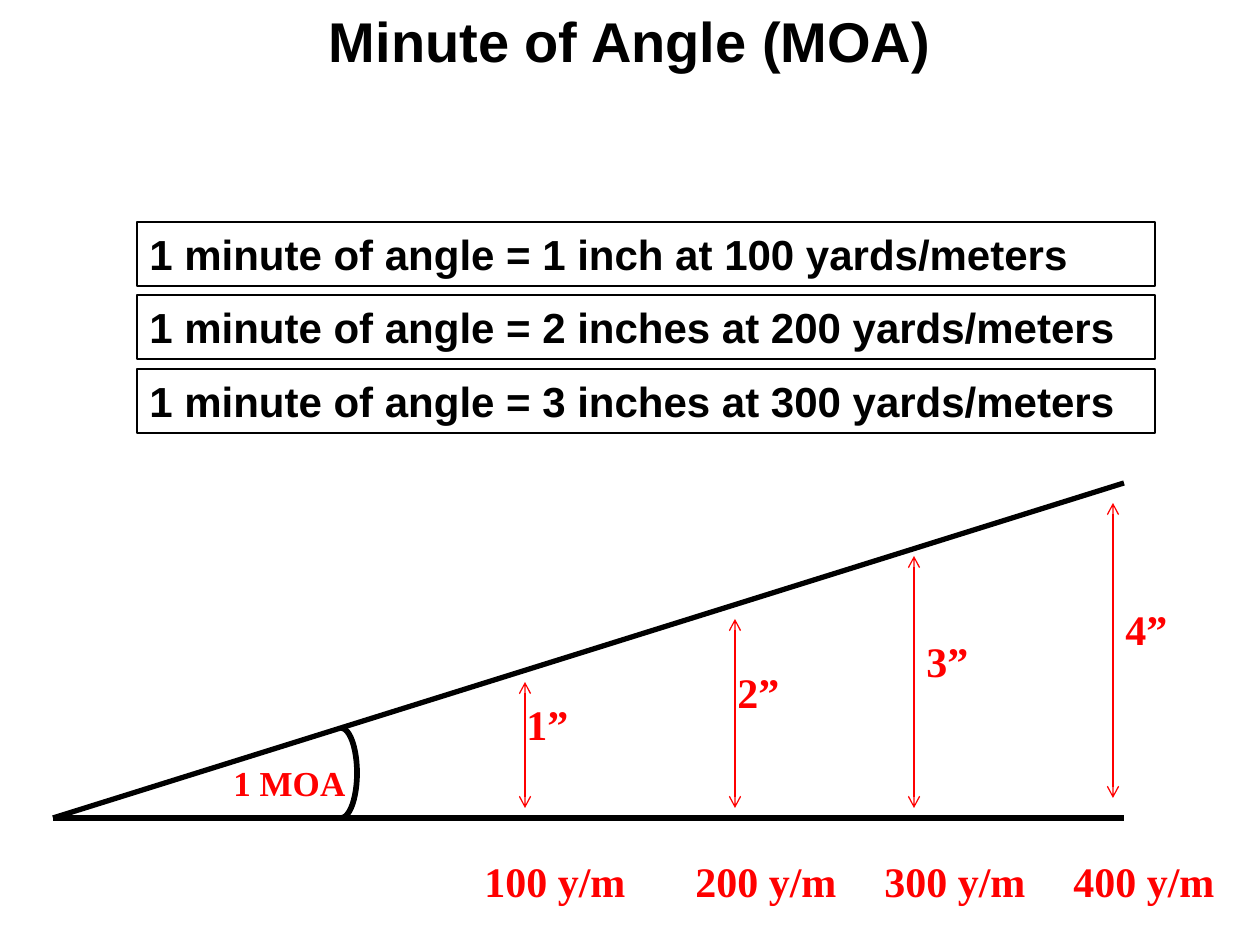
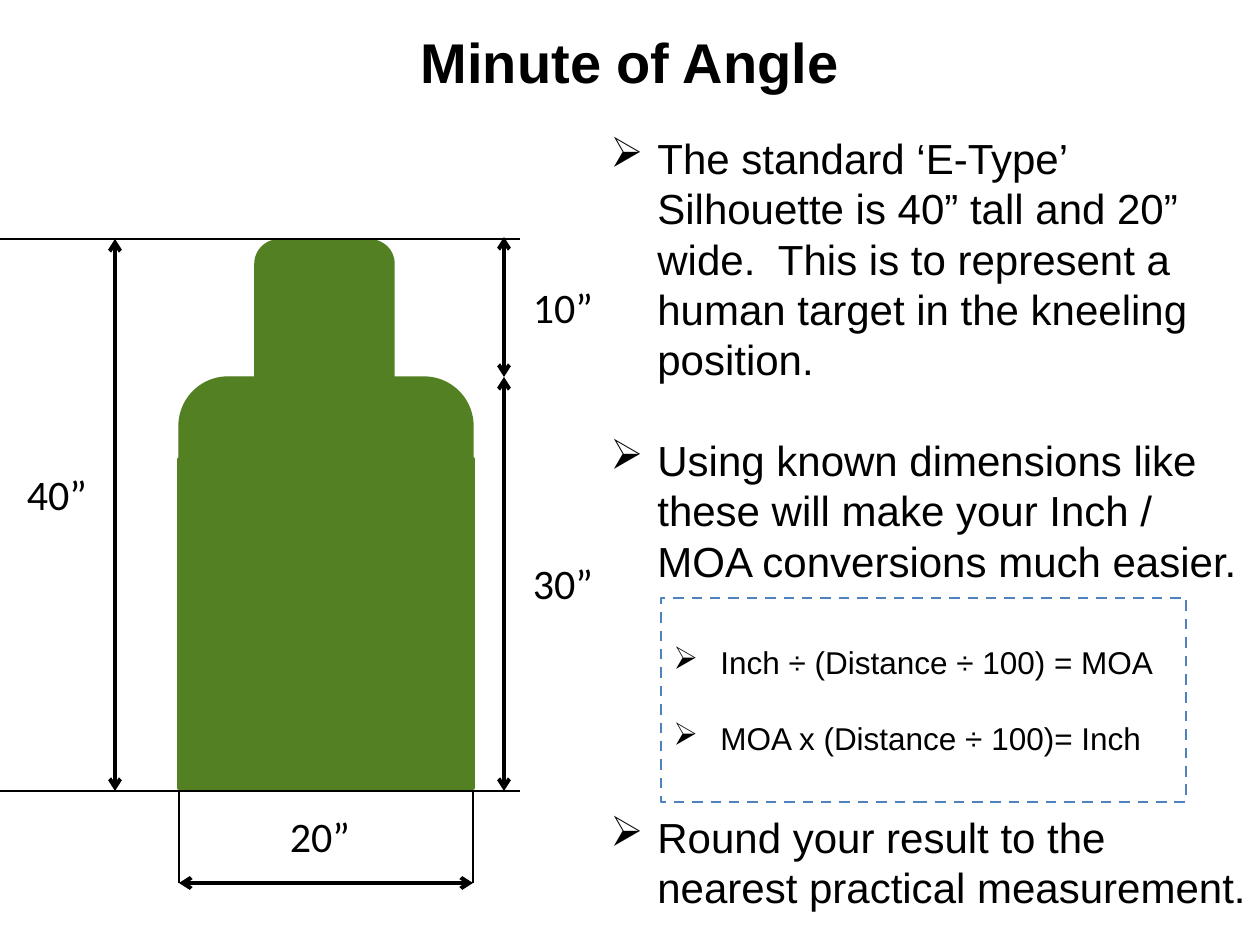
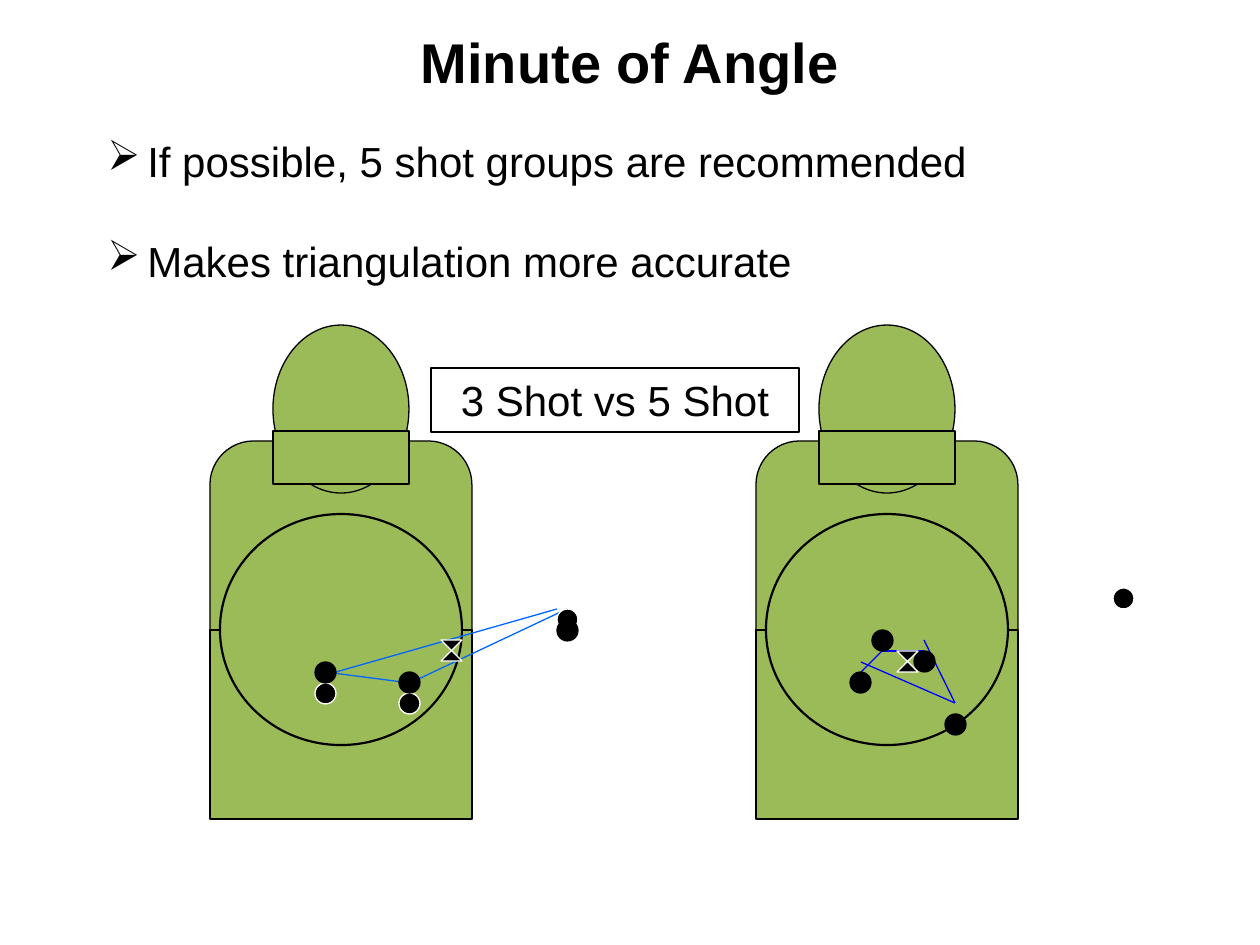
from lxml import etree
from pptx import Presentation
from pptx.dml.color import RGBColor
from pptx.enum.dml import MSO_LINE
from pptx.enum.shapes import MSO_CONNECTOR, MSO_SHAPE as Preset
from pptx.enum.text import MSO_ANCHOR as Anchor, MSO_AUTO_SIZE, PP_ALIGN as Align
from pptx.oxml.ns import qn
from pptx.util import Pt

PX = 914400 / 126
BLACK = RGBColor(0x00, 0x00, 0x00)
WHITE = RGBColor(0xFF, 0xFF, 0xFF)
RED = RGBColor(0xFF, 0x00, 0x00)
DARK_GREEN = RGBColor(0x53, 0x80, 0x22)
LIGHT_GREEN = RGBColor(0x9B, 0xBB, 0x59)
FRAME_BLUE = RGBColor(0x4F, 0x81, 0xBD)
SKY_BLUE = RGBColor(0x00, 0x66, 0xFF)
PURE_BLUE = RGBColor(0x00, 0x00, 0xFF)

TITLE = dict(name="Arial", size=Pt(32), bold=True)
BODY = dict(name="Arial", size=Pt(24), bold=False)
RULE = dict(name="Arial", size=Pt(24), bold=True)
FORMULA = dict(name="Arial", size=Pt(18), bold=False)
DIMENSION = dict(name="Calibri", size=Pt(24), bold=False)
RANGE_MARK = dict(name="Times New Roman", size=Pt(24), bold=True)
ANGLE_MARK = dict(name="Times New Roman", size=Pt(20), bold=True)

DOT = 21


def emu(*lengths):
    return [round(length * PX) for length in lengths]


def add_bullet(para, indent):
    properties = para._p.get_or_add_pPr()
    properties.set("marL", str(emu(indent)[0]))
    properties.set("indent", str(-emu(indent)[0]))
    etree.SubElement(properties, qn("a:buChar")).set("char", "➢")


def write(box, paras, style, color=BLACK, align=Align.LEFT, anchor=Anchor.TOP,
          wrap=True, indent=0, gaps=()):
    """Fill a box with paragraphs; gaps are the points after each one."""
    frame = box.text_frame
    frame_format = dict(word_wrap=wrap, vertical_anchor=anchor, auto_size=MSO_AUTO_SIZE.NONE)
    for name, value in frame_format.items():
        setattr(frame, name, value)
    for index, text in enumerate(paras):
        para = frame.add_paragraph() if index else frame.paragraphs[0]
        if indent:
            add_bullet(para, indent)
        para.alignment = align
        if index < len(gaps):
            para.space_after = Pt(gaps[index])
        span = para.add_run()
        span.text = text
        for name, value in style.items():
            setattr(span.font, name, value)
        span.font.color.rgb = color


def add_text(page, bounds, paras, style, **options):
    box = page.shapes.add_textbox(*emu(*bounds))
    write(box, paras, style, **options)


def add_figure(page, preset, bounds, fill=None, line=BLACK, width=0.75):
    figure = page.shapes.add_shape(preset, *emu(*bounds))
    figure.shadow.inherit = False
    if fill is None:
        figure.fill.background()
    else:
        figure.fill.solid()
        figure.fill.fore_color.rgb = fill
    figure.line.color.rgb = line
    figure.line.width = Pt(width)
    return figure


def add_line(page, start, end, color=BLACK, width=0.75, arrows=False):
    line = page.shapes.add_connector(MSO_CONNECTOR.STRAIGHT, *emu(*start, *end))
    line.line.color.rgb = color
    line.line.width = Pt(width)
    if arrows:
        for tag in ("a:headEnd", "a:tailEnd"):
            etree.SubElement(line.get_or_add_ln(), qn(tag)).set("type", "arrow")
    etree.SubElement(line._element.spPr, qn("a:effectLst"))


def add_page(deck, title, top):
    page = deck.slides.add_slide(deck.slide_layouts[5])
    heading = page.shapes.title
    bounds = emu(315, top, 630, 81)
    for name, value in zip(("left", "top", "width", "height"), bounds):
        setattr(heading, name, value)
    write(heading, [title], TITLE, align=Align.CENTER, wrap=False)
    return page


def draw_angle(page, left, top):
    """Draw the opening angle with its spread at each distance."""
    def at(x, y):
        return left + x, top + y

    # distance, its label x, arrow x, arrow top, arrow bottom, spread label x and y
    marks = [
        (100, 419, 472, 199, 325, 461, 209),
        (200, 630, 682, 136, 325, 672, 177),
        (300, 819, 861, 73, 325, 861, 146),
        (400, 1008, 1060, 20, 315, 1060, 114),
    ]
    for end in (335, 0):
        add_line(page, at(0, 335), at(1071, end), width=3)
    add_text(page, (*at(168, 272), 158, 54), ["1 MOA"], ANGLE_MARK, color=RED)
    for distance, label_x, x, upper, lower, spread_x, spread_y in marks:
        add_line(page, at(x, upper), at(x, lower), RED, arrows=True)
        add_text(page, (*at(label_x, 366), 179, 63), [f"{distance} y/m"], RANGE_MARK, color=RED)
        add_text(page, (*at(spread_x, spread_y), 95, 63), [f"{distance // 100}”"],
                 RANGE_MARK, color=RED)
    arc = add_figure(page, Preset.ARC, (*at(272, 245), 32, 90), width=3.25)
    arc.adjustments[0] = 162
    arc.adjustments[1] = 54


def draw_silhouette(page, left, top):
    """Draw the E-type target with its measurements."""
    def at(x, y):
        return left + x, top + y

    parts = [
        (Preset.ROUNDED_RECTANGLE, (179, 138, 294, 411), 0.75),
        (Preset.ROUNDED_RECTANGLE, (256, 2, 137, 176), 2),
        (Preset.RECTANGLE, (179, 220, 294, 329), 2),
    ]
    for preset, (x, y, width, height), outline in parts:
        add_figure(page, preset, (*at(x, y), width, height), DARK_GREEN, DARK_GREEN, outline)
    for y in (0, 552):
        add_line(page, at(520, y), at(0, y), width=1.5)
    for x in (179, 473):
        add_line(page, at(x, 552), at(x, 644), width=1.5)
    measures = [
        ("40”", (115, 0), (115, 552), (14, 223)),
        ("20”", (473, 644), (179, 644), (277, 565)),
        ("30”", (504, 138), (504, 552), (520, 312)),
        ("10”", (504, -2), (504, 138), (520, 36)),
    ]
    for label, start, end, place in measures:
        add_line(page, at(*start), at(*end), width=2.25, arrows=True)
        add_text(page, (*at(*place), 86, 63), [label], DIMENSION, align=Align.CENTER, wrap=False)


def draw_shot_target(page, left, top, links, link_color, pale_dots, dark_dots, center):
    """Draw a target, the lines between its hits, the hits and the group centre."""
    def at(x, y):
        return left + x, top + y

    parts = [
        (Preset.ROUNDED_RECTANGLE, (0, 116, 262, 378), 0.75),
        (Preset.RECTANGLE, (0, 305, 262, 189), 0.75),
        (Preset.OVAL, (63, 0, 136, 168), 0.75),
        (Preset.RECTANGLE, (63, 106, 136, 53), 0.75),
        (Preset.OVAL, (10, 189, 242, 231), 1.25),
    ]
    for preset, (x, y, width, height), outline in parts:
        add_figure(page, preset, (*at(x, y), width, height), LIGHT_GREEN, width=outline)
    for start, end in links:
        add_line(page, at(*start), at(*end), link_color)
    for dots, outline in ((pale_dots, WHITE), (dark_dots, BLACK)):
        for dot in dots:
            add_figure(page, Preset.OVAL, (*at(*dot), DOT, DOT), BLACK, outline)
    add_figure(page, Preset.FLOWCHART_COLLATE, (*at(*center), DOT, DOT), BLACK, WHITE)


def build_definition(deck):
    page = add_page(deck, "Minute of Angle (MOA)", 0)
    draw_angle(page, 53, 483)
    for index, size in enumerate(("1 inch", "2 inches", "3 inches")):
        box = add_figure(page, Preset.RECTANGLE, (137, 222 + index * 147 // 2, 1018, 64))
        write(box, [f"1 minute of angle = {size} at {index + 1}00 yards/meters"], RULE)


def build_conversion(deck):
    page = add_page(deck, "Minute of Angle", 21)
    draw_silhouette(page, 0, 239)
    add_text(page, (598, 126, 662, 801), [
        "The standard ‘E-Type’ Silhouette is 40” tall and 20” wide.  "
        "This is to represent a human target in the kneeling position.",
        "Using known dimensions like these will make your Inch / MOA conversions much easier.",
        "Round your result to the nearest practical measurement.",
    ], BODY, indent=47, gaps=(28.75, 129))
    frame = add_figure(page, Preset.RECTANGLE, (661, 598, 525, 204), line=FRAME_BLUE, width=1.5)
    frame.line.dash_style = MSO_LINE.DASH
    write(frame, ["Inch ÷ (Distance ÷ 100) = MOA", "MOA x (Distance ÷ 100)= Inch"],
          FORMULA, anchor=Anchor.MIDDLE, indent=47, gaps=(21.5,))


def build_shot_groups(deck):
    page = add_page(deck, "Minute of Angle", 21)
    add_text(page, (95, 129, 895, 165),
             ["If possible, 5 shot groups are recommended", "Makes triangulation more accurate"],
             BODY, indent=40, gaps=(28.75,))
    draw_shot_target(
        page, 756, 325,
        links=[((105, 337), (199, 378)), ((105, 347), (126, 326)),
               ((126, 326), (168, 326)), ((168, 315), (199, 378))],
        link_color=PURE_BLUE,
        pale_dots=[(357, 263)],
        dark_dots=[(94, 347), (189, 389), (158, 326), (116, 305)],
        center=(141, 326))
    draw_shot_target(
        page, 210, 325,
        links=[((126, 347), (347, 284)), ((115, 347), (200, 358)), ((200, 358), (357, 284))],
        link_color=SKY_BLUE,
        pale_dots=[(189, 368), (347, 284), (105, 358)],
        dark_dots=[(189, 347), (105, 337), (347, 295)],
        center=(231, 315))
    label = add_figure(page, Preset.RECTANGLE, (431, 368, 368, 64), width=1.5)
    write(label, ["3 Shot vs 5 Shot"], BODY, align=Align.CENTER)


def main():
    deck = Presentation()
    deck.slide_width, deck.slide_height = emu(1260, 945)
    build_definition(deck)
    build_conversion(deck)
    build_shot_groups(deck)
    deck.save("out.pptx")


if __name__ == "__main__":
    main()
